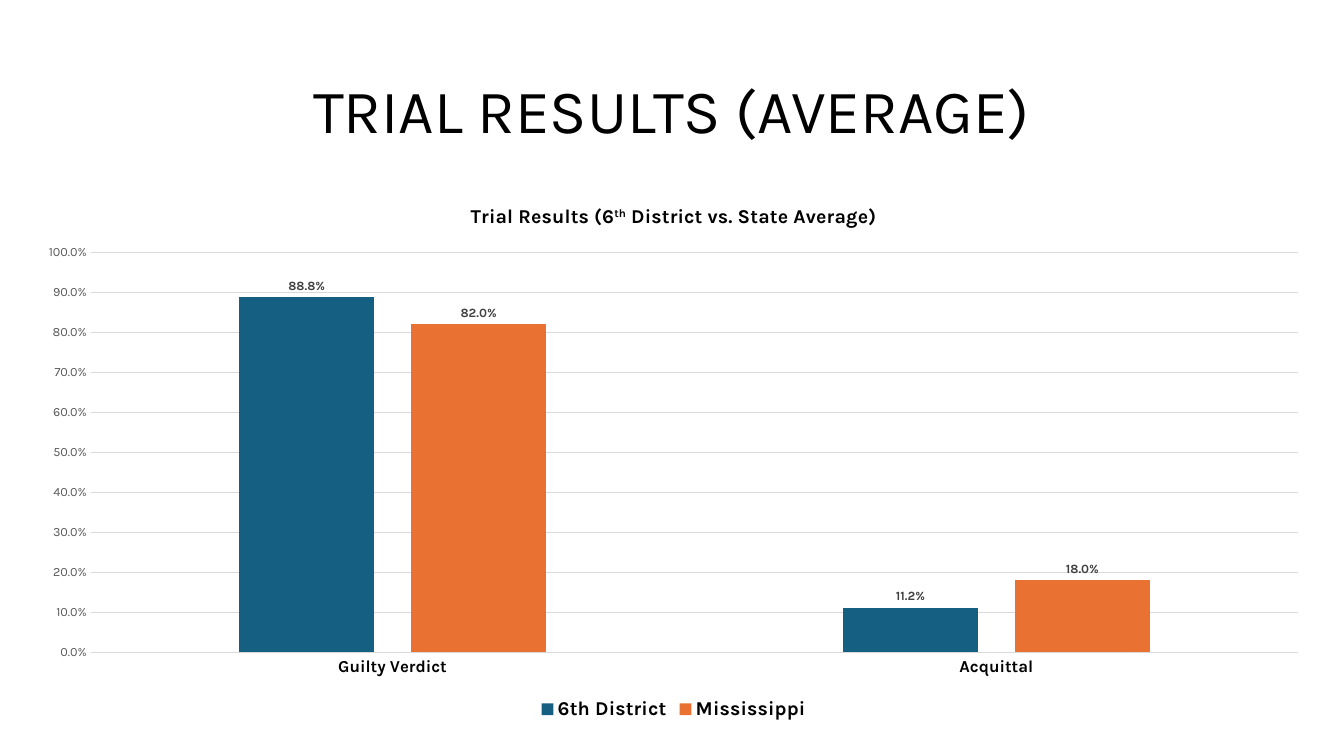
from pptx import Presentation
from pptx.chart.data import CategoryChartData as Data
from pptx.dml.color import RGBColor
from pptx.enum.chart import XL_CHART_TYPE as Kind, XL_LABEL_POSITION as Spot
from pptx.enum.chart import XL_LEGEND_POSITION as Side, XL_TICK_MARK as Tick
from pptx.enum.text import MSO_ANCHOR as Anchor, PP_ALIGN as Align
from pptx.oxml import parse_xml
from pptx.oxml.ns import nsdecls
from pptx.util import Pt


def paint(part, color):
    part.solid()
    part.fore_color.rgb = RGBColor.from_string(color)


def style(font, text=None, para=None, size=10, color="000000", bold=False):
    if para is not None:
        run = para.add_run()
        run.text = text
        font = run.font
    font.name = "Karla"
    font.size = Pt(size)
    font.bold = bold
    paint(font.fill, color)
    return font


deck = Presentation()
deck.slide_width, deck.slide_height = Pt(960), Pt(540)
slide = deck.slides.add_slide(deck.slide_layouts[5])

title = slide.shapes.title
title.left, title.top, title.width, title.height = Pt(66), Pt(28.75), Pt(828), Pt(104.4)
frame = title.text_frame
frame.word_wrap = True
frame.vertical_anchor = Anchor.MIDDLE
head = frame.paragraphs[0]
head.alignment = Align.CENTER
head.line_spacing = 0.9
style(None, "TRIAL RESULTS (AVERAGE)", head, size=44)

data = Data(number_format="0.0%")
data.categories = ["Guilty Verdict", "Acquittal"]
data.add_series("6th District", [0.888, 0.112])
data.add_series("Mississippi", [0.82, 0.18])
chart = slide.shapes.add_chart(
    Kind.COLUMN_CLUSTERED, Pt(16.5), Pt(131.75), Pt(929.5), Pt(386), data
).chart
style(chart.font)

chart.has_title = True
para = chart.chart_title.text_frame.paragraphs[0]
for text, lift in [("Trial Results (6", 0), ("th", 30000), (" District vs. State Average)", 0)]:
    font = style(None, text, para, size=14, bold=True)
    if lift:
        font._element.set("baseline", str(lift))
chart.chart_title.include_in_layout = False

chart.has_legend = True
chart.legend.position = Side.BOTTOM
chart.legend.include_in_layout = False
style(chart.legend.font, size=14, bold=True)

cats, vals = chart.category_axis, chart.value_axis
for axis in (cats, vals):
    axis.major_tick_mark = axis.minor_tick_mark = Tick.NONE
style(cats.tick_labels.font, size=12, bold=True)
style(vals.tick_labels.font, size=9, color="595959")
vals.minimum_scale, vals.maximum_scale, vals.major_unit = 0, 1, 0.1
vals.tick_labels.number_format = "0.0%"
vals.tick_labels.number_format_is_linked = False
vals.format.line.fill.background()
for line in (cats.format.line, vals.major_gridlines.format.line):
    line.width = Pt(0.75)
    paint(line.fill, "D9D9D9")

plot = chart.plots[0]
plot.gap_width, plot.overlap = 219, -27
plot.vary_by_categories = False
for bars, color in zip(plot.series, ["156082", "E97132"]):
    paint(bars.format.fill, color)
    bars.invert_if_negative = False
    tags = bars.data_labels
    tags.show_value = True
    tags.position = Spot.OUTSIDE_END
    tags.number_format = "0.0%"
    tags.number_format_is_linked = False
    style(tags.font, size=9, color="404040", bold=True)

area = chart._chartSpace.chart.plotArea
for old in area.findall("{*}layout"):
    area.remove(old)
rules = '<c:layoutTarget val="inner"/><c:xMode val="edge"/><c:yMode val="edge"/>'
for key, part in [("x", 0.052), ("y", 0.126), ("w", 0.928), ("h", 0.74)]:
    rules += f'<c:{key} val="{part}"/>'
area.insert(0, parse_xml(
    f'<c:layout {nsdecls("c")}><c:manualLayout>{rules}</c:manualLayout></c:layout>'
))

deck.save("out.pptx")
